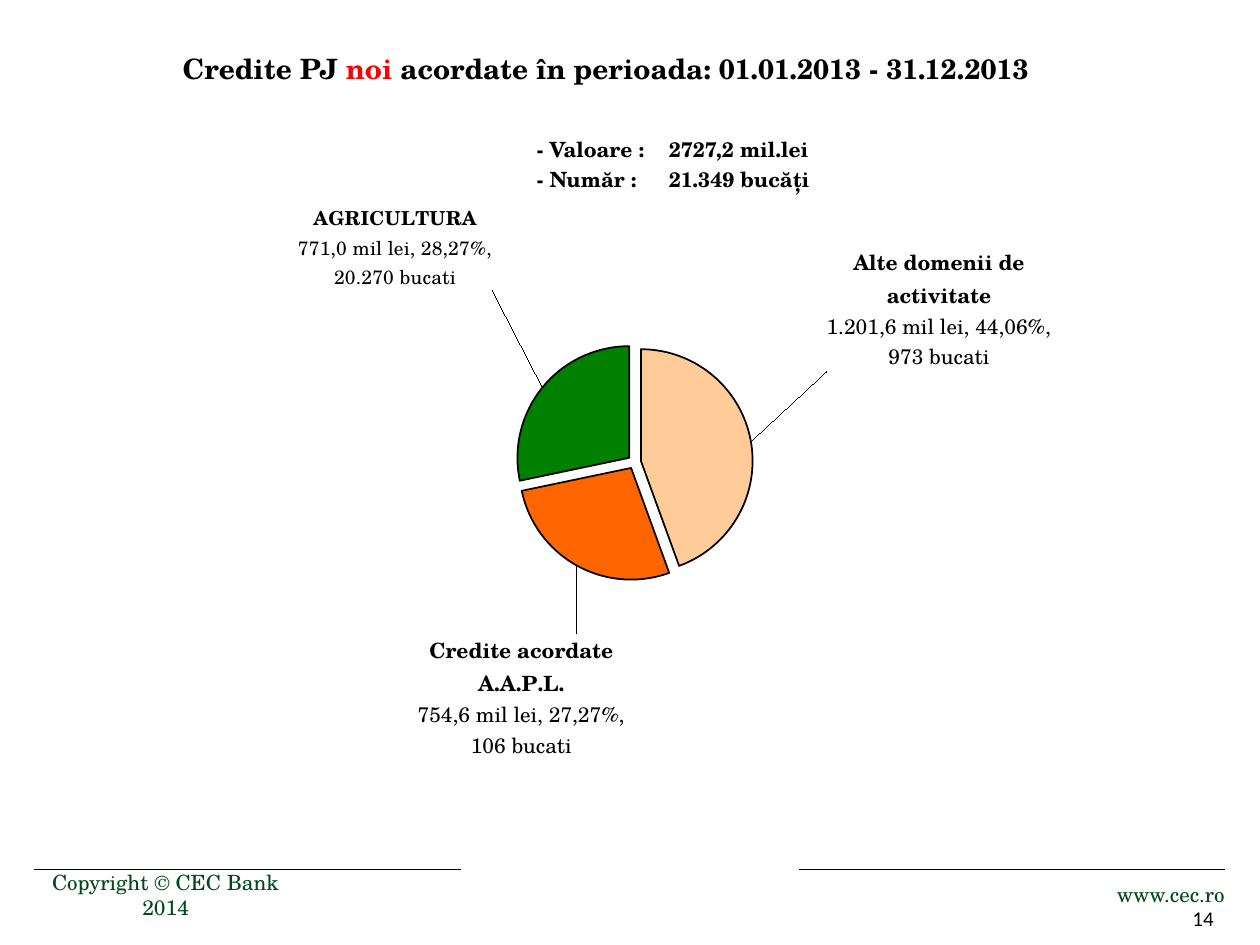
from lxml import etree
from pptx import Presentation
from pptx.chart.data import CategoryChartData
from pptx.dml.color import RGBColor
from pptx.enum.chart import XL_CHART_TYPE, XL_LABEL_POSITION
from pptx.enum.shapes import MSO_CONNECTOR
from pptx.enum.text import MSO_ANCHOR, PP_ALIGN
from pptx.oxml import parse_xml
from pptx.oxml.ns import qn
from pptx.util import Inches, Pt

PIE = XL_CHART_TYPE.PIE
OUTER = XL_LABEL_POSITION.OUTSIDE_END
STRAIGHT = MSO_CONNECTOR.STRAIGHT
TOP, MIDDLE = MSO_ANCHOR.TOP, MSO_ANCHOR.MIDDLE
LEFT, CENTER, RIGHT = PP_ALIGN.LEFT, PP_ALIGN.CENTER, PP_ALIGN.RIGHT

COLORS = {"black": "000000", "red": "FF0000", "pine": "004818",
          "peach": "FFCC99", "orange": "FF6600", "green": "008000"}
SERIF = "TeX Gyre Schola"
CHART_NS = "http://schemas.openxmlformats.org/drawingml/2006/chart"

SLICES = [
    ("Alte domenii de activitate", 44, "peach", 12, (0.054, -0.086),
     ["1.201,6 mil lei, 44,06%,", "973 bucati"]),
    ("Credite acordate A.A.P.L.", 27, "orange", 12, (0.041, 0.077),
     ["754,6 mil lei, 27,27%,", "106 bucati"]),
    ("AGRICULTURA", 28, "green", 11, (-0.035, -0.115),
     ["771,0 mil lei, 28,27%,", "20.270 bucati"]),
]


def rgb(name):
    return RGBColor.from_string(COLORS[name])


def style(font, size, color="black", bold=False, face=SERIF):
    font.name, font.size, font.bold = face, Pt(size), bold
    font.color.rgb = rgb(color)


def add_text(slide, box, lines, size, color="black", bold=False,
             face=SERIF, align=LEFT, anchor=TOP):
    frame = slide.shapes.add_textbox(*map(Inches, box)).text_frame
    frame.word_wrap = True
    frame.vertical_anchor = anchor
    frame.text = "\n".join(lines)
    for para in frame.paragraphs:
        para.alignment = align
        for run in para.runs:
            style(run.font, size, color, bold, face)
    return frame


def add_title(slide):
    frame = add_text(slide, (1.14, 0.36, 7.34, 0.67), ["Credite PJ "],
                     16, bold=True, align=CENTER)
    for text, color in [("noi ", "red"),
                        ("acordate în perioada: 01.01.2013 - 31.12.2013", "black")]:
        run = frame.paragraphs[0].add_run()
        run.text = text
        style(run.font, 16, color, True)


def add_totals(slide):
    frame = add_text(slide, (4.16, 1.07, 3.28, 0.53),
                     ["- Valoare :\t2727,2 mil.lei", "- Număr :\t21.349 bucăți"],
                     12, bold=True)
    for para in frame.paragraphs:
        para.line_spacing = 0.8
        tabs = etree.SubElement(para._p.get_or_add_pPr(), qn("a:tabLst"))
        etree.SubElement(tabs, qn("a:tab"), pos=str(Inches(1.05)), algn="l")
    frame.paragraphs[1].space_before = Pt(6)


def add_rule(slide, left, right, y):
    line = slide.shapes.add_connector(
        STRAIGHT, Inches(left), Inches(y), Inches(right), Inches(y))
    line.line.color.rgb = rgb("black")
    line.line.width = Pt(0.75)
    etree.SubElement(line._element.spPr, qn("a:effectLst"))


def make_layout(**values):
    body = "".join(f'<c:{key} val="{val}"/>' for key, val in values.items())
    return parse_xml(f'<c:layout xmlns:c="{CHART_NS}"><c:manualLayout>'
                     f'{body}</c:manualLayout></c:layout>')


def outline(form):
    form.line.color.rgb = rgb("black")
    form.line.width = Pt(1)


def add_label(point, name, size, shift, notes):
    label = point.data_label
    frame = label.text_frame
    frame.word_wrap = True
    frame.text = "\n".join([name] + notes)
    for i, para in enumerate(frame.paragraphs):
        para.alignment = CENTER
        style(para.runs[0].font, size, bold=i == 0)
    label.position = OUTER
    node = label._dLbl
    node.find(qn("c:idx")).addnext(make_layout(x=shift[0], y=shift[1]))


def add_pie(slide):
    data = CategoryChartData()
    data.categories = [item[0] for item in SLICES]
    data.add_series("Series 1", [item[1] for item in SLICES])
    box = map(Inches, (0, 0.29, 10.05, 6.35))
    chart = slide.shapes.add_chart(PIE, *box, data).chart
    chart.has_legend = chart.has_title = False
    style(chart.font, 10, face="Arial")
    plot = chart.plots[0]
    plot.vary_by_categories = True

    area = chart._chartSpace.chart.plotArea
    for old in area.findall(qn("c:layout")):
        area.remove(old)
    area.insert(0, make_layout(layoutTarget="inner", xMode="edge", yMode="edge",
                               x=0.274, y=0.384, w=0.454, h=0.296))

    series = plot.series[0]
    outline(series.format)
    burst = etree.Element(qn("c:explosion"), val="6")
    series._element.find(qn("c:spPr")).addnext(burst)

    labels = series.data_labels
    labels.show_value = False
    labels.show_percentage = labels.show_category_name = True
    labels.number_format, labels.number_format_is_linked = "0%", False
    labels.position = OUTER
    style(labels.font, 10, face="Arial")
    for i, (name, _, color, size, shift, notes) in enumerate(SLICES):
        point = series.points[i]
        point.format.fill.solid()
        point.format.fill.fore_color.rgb = rgb(color)
        outline(point.format)
        add_label(point, name, size, shift, notes)


def main():
    deck = Presentation()
    deck.slide_width, deck.slide_height = Inches(10), Inches(7.5)
    slide = deck.slides.add_slide(deck.slide_layouts[6])
    add_rule(slide, 6.34, 9.72, 6.9)
    add_rule(slide, 0.27, 3.66, 6.9)
    add_text(slide, (0.15, 6.9, 2.33, 0.4), ["Copyright © CEC Bank 2014"], 12,
             "pine", align=CENTER, anchor=MIDDLE)
    add_text(slide, (8.56, 6.9, 1.26, 0.4), ["www.cec.ro"], 12,
             "pine", align=RIGHT, anchor=MIDDLE)
    add_text(slide, (7.84, 7.14, 1.89, 0.39), ["14"], 12,
             face="Calibri", align=RIGHT)
    add_title(slide)
    add_totals(slide)
    add_pie(slide)
    deck.save("out.pptx")


if __name__ == "__main__":
    main()
